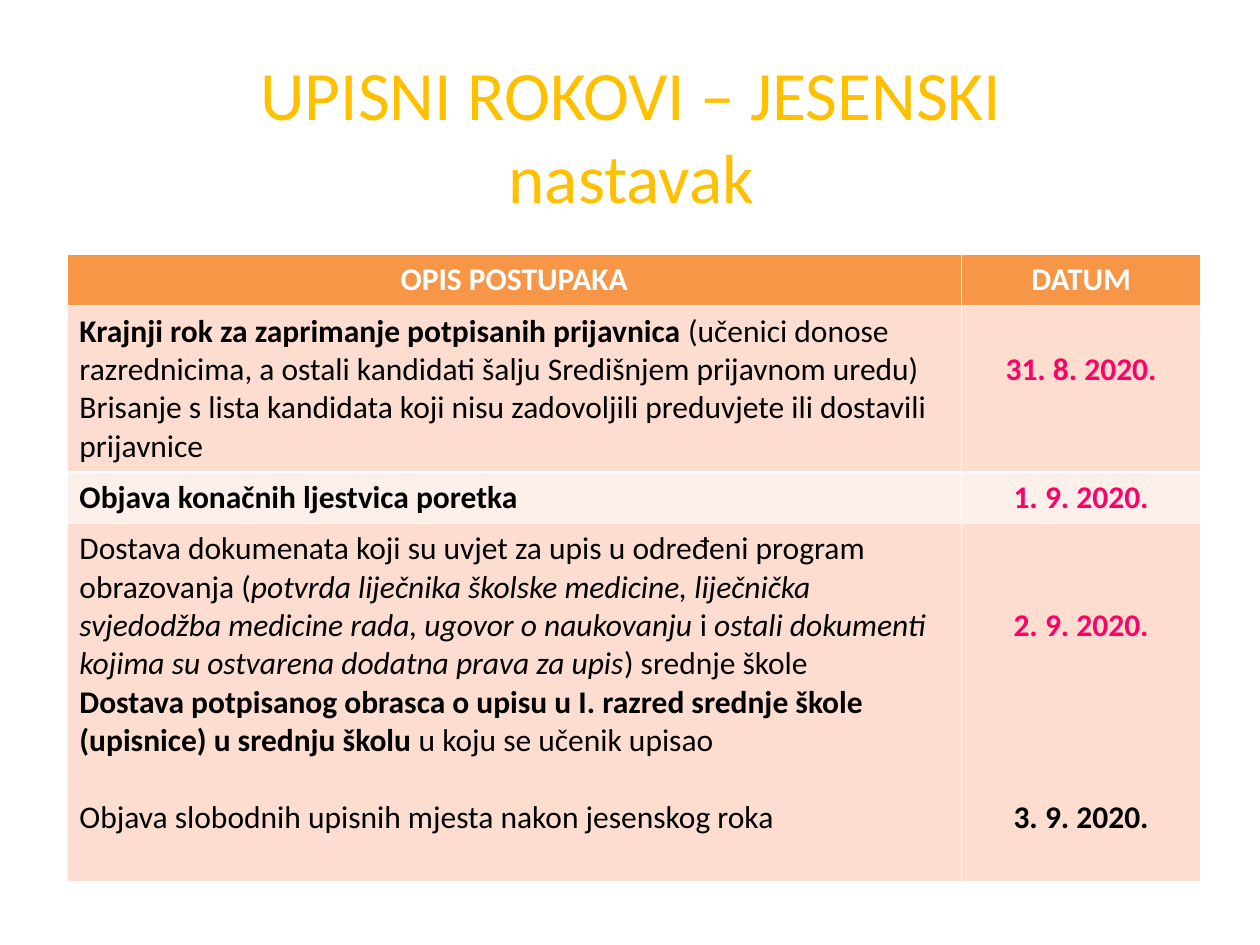
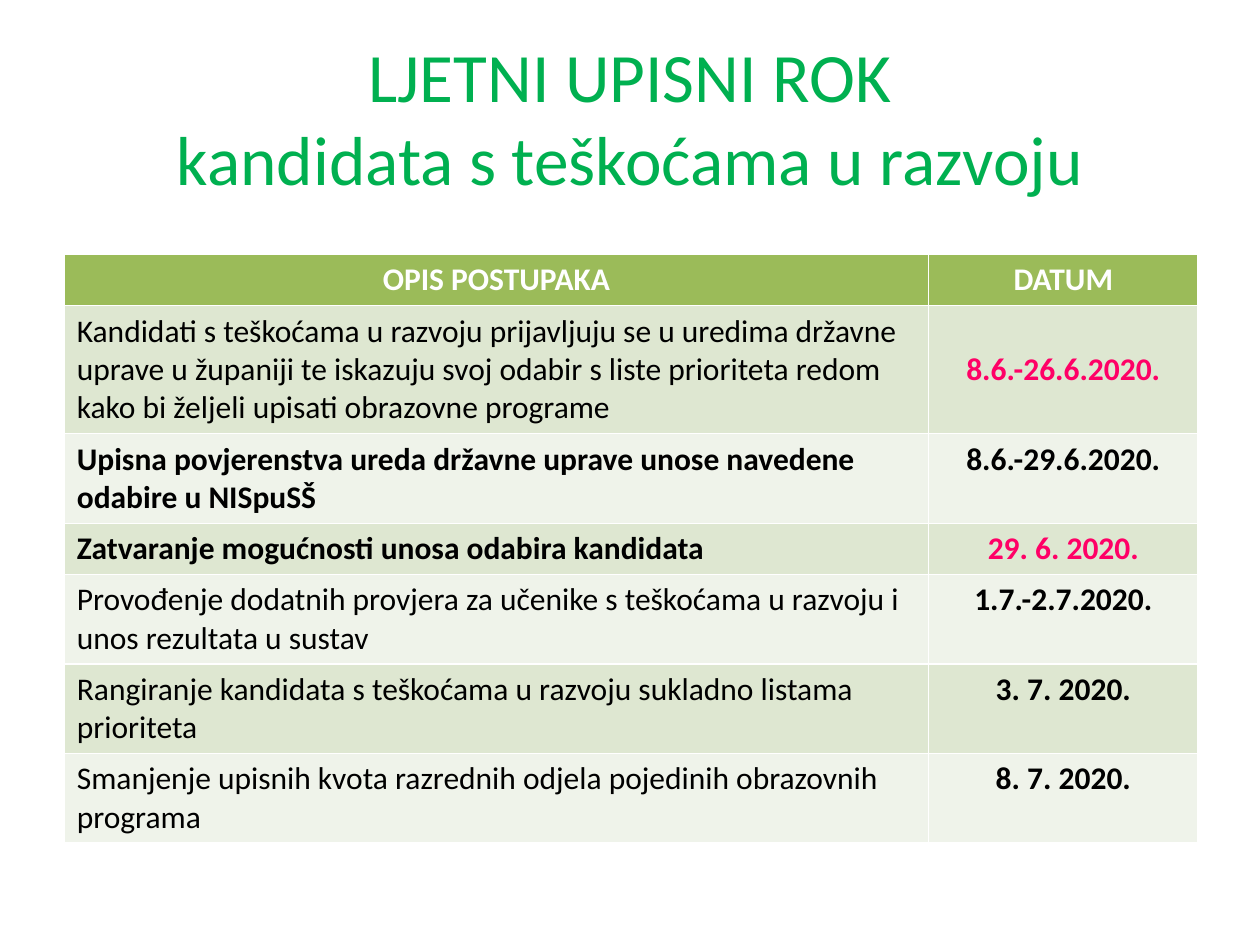
"""Build two slides of enrolment deadlines, each a title over a table of dates."""
from dataclasses import dataclass

from pptx import Presentation
from pptx.dml.color import RGBColor as Color
from pptx.enum.text import MSO_ANCHOR as Anchor, PP_ALIGN as Align
from pptx.util import Pt


@dataclass(frozen=True)
class Theme:
    font: str = "Calibri"
    title_size: float = 39.6
    body_size: float = 18
    line_height: float = 21.95
    cell_margin: float = 3.6
    text: str = "000000"
    header_text: str = "FFFFFF"
    deadline: str = "FF0066"


@dataclass(frozen=True)
class Palette:
    title: str
    header: str
    bands: tuple


@dataclass(frozen=True)
class Line:
    runs: tuple
    gap_lines: int = 0
    color: str = Theme.text


@dataclass(frozen=True)
class Row:
    lines: int
    description: tuple
    dates: tuple


THEME = Theme()
AUTUMN = Palette("FFC000", "F79646", ("FCDDCF", "FDEFE9"))
SUMMER = Palette("00B050", "9BBB59", ("DEE7D1", "EFF3EA"))
HEADINGS = ("OPIS POSTUPAKA", "DATUM")


def line(*runs, gap_lines=0):
    """Return a paragraph of (text, style) runs, where style is "", "b" or "i"."""
    return Line(runs, gap_lines)


def date(text, gap_lines=0, deadline=False):
    """Return a bold date, in the deadline colour if asked."""
    return Line(((text, "b"),), gap_lines, THEME.deadline if deadline else THEME.text)


AUTUMN_ROWS = (
    Row(4, (
        line(("Krajnji rok za zaprimanje potpisanih prijavnica ", "b"),
             ("(učenici donose razrednicima, a ostali kandidati šalju "
              "Središnjem prijavnom uredu)", "")),
        line(("Brisanje s lista kandidata koji nisu zadovoljili preduvjete "
              "ili dostavili prijavnice", "")),
    ), (date("31. 8. 2020.", 1, True),)),
    Row(1, (line(("Objava konačnih ljestvica poretka", "b")),),
        (date("1. 9. 2020.", deadline=True),)),
    Row(9, (
        line(("Dostava dokumenata koji su uvjet za upis u određeni program obrazovanja (", ""),
             ("potvrda liječnika školske medicine, liječnička svjedodžba medicine rada, "
              "ugovor o naukovanju ", "i"),
             ("i ", ""),
             ("ostali dokumenti kojima su ostvarena dodatna prava za upis", "i"),
             (") srednje škole", "")),
        line(("Dostava potpisanog obrasca o upisu u I. razred srednje škole "
              "(upisnice) u srednju školu ", "b"),
             ("u koju se učenik upisao", "")),
        line(("Objava slobodnih upisnih mjesta nakon jesenskog roka", ""), gap_lines=1),
    ), (date("2. 9. 2020.", 2, True), date("3. 9. 2020.", 4))),
)

SUMMER_ROWS = (
    Row(3, (line(("Kandidati s teškoćama u razvoju prijavljuju se u uredima državne uprave "
                  "u županiji te iskazuju svoj odabir s liste prioriteta redom kako bi "
                  "željeli upisati obrazovne programe", "")),),
        (date("8.6.-26.6.2020.", 1, True),)),
    Row(2, (line(("Upisna povjerenstva ureda državne uprave unose navedene "
                  "odabire u NISpuSŠ", "b")),),
        (date("8.6.-29.6.2020."),)),
    Row(1, (line(("Zatvaranje mogućnosti unosa odabira kandidata", "b")),),
        (date("29. 6. 2020.", deadline=True),)),
    Row(2, (line(("Provođenje dodatnih provjera za učenike s teškoćama u razvoju "
                  "i unos rezultata u sustav", "")),),
        (date("1.7.-2.7.2020."),)),
    Row(2, (line(("Rangiranje kandidata s teškoćama u razvoju sukladno "
                  "listama prioriteta", "")),),
        (date("3. 7. 2020."),)),
    Row(2, (line(("Smanjenje upisnih kvota razrednih odjela pojedinih "
                  "obrazovnih programa", "")),),
        (date("8. 7. 2020."),)),
)


def style_font(font, size, color):
    """Set the shared typeface with a size and a colour."""
    font.name = THEME.font
    font.size = Pt(size)
    font.color.rgb = Color.from_string(color)


def place_title(slide, box, text, color):
    """Move the title placeholder into the box and write its lines."""
    title = slide.shapes.title
    title.left, title.top, title.width, title.height = (Pt(length) for length in box)
    frame = title.text_frame
    frame.vertical_anchor = Anchor.MIDDLE
    frame.text = text
    paragraph = frame.paragraphs[0]
    paragraph.alignment = Align.CENTER
    style_font(paragraph.font, THEME.title_size, color)


def fill_cell(cell, lines, fill, alignment):
    """Fill a cell with paragraphs; gaps become a top margin or paragraph spacing."""
    cell.fill.solid()
    cell.fill.fore_color.rgb = Color.from_string(fill)
    cell.margin_top = Pt(THEME.cell_margin + lines[0].gap_lines * THEME.line_height)
    frame = cell.text_frame
    for index, content in enumerate(lines):
        paragraph = frame.add_paragraph() if index else frame.paragraphs[0]
        paragraph.alignment = alignment
        style_font(paragraph.font, THEME.body_size, content.color)
        if index and content.gap_lines:
            paragraph.space_before = Pt(content.gap_lines * THEME.line_height)
        for text, style in content.runs:
            run = paragraph.add_run()
            run.text = text
            run.font.bold = style == "b"
            run.font.italic = style == "i"


def row_height(lines):
    """Return the height of a row that holds this many lines of text."""
    return lines * THEME.line_height + 2 * THEME.cell_margin


def place_table(slide, left, top, column_widths, rows, palette):
    """Add the deadline table with its header row and alternating bands."""
    heights = [row_height(1)] + [row_height(row.lines) for row in rows]
    table = slide.shapes.add_table(
        len(heights), len(column_widths), Pt(left), Pt(top),
        Pt(sum(column_widths)), Pt(sum(heights))).table
    for column, width in zip(table.columns, column_widths):
        column.width = Pt(width)
    for table_row, height in zip(table.rows, heights):
        table_row.height = Pt(height)
    for column, heading in enumerate(HEADINGS):
        content = Line(((heading, "b"),), color=THEME.header_text)
        fill_cell(table.cell(0, column), (content,), palette.header, Align.CENTER)
    for index, row in enumerate(rows):
        band = palette.bands[index % 2]
        fill_cell(table.cell(index + 1, 0), row.description, band, Align.LEFT)
        fill_cell(table.cell(index + 1, 1), row.dates, band, Align.CENTER)


def add_deadline_slide(presentation, title, title_corner, table_left,
                       column_widths, rows, palette):
    """Add a title-only slide with a deadline table below the title."""
    slide = presentation.slides.add_slide(presentation.slide_layouts[5])
    place_title(slide, (*title_corner, 648, 90), title, palette.title)
    place_table(slide, table_left, 145.5, column_widths, rows, palette)


def main():
    """Build and save the presentation."""
    presentation = Presentation()
    presentation.slide_width, presentation.slide_height = Pt(720), Pt(540)
    add_deadline_slide(presentation, "UPISNI ROKOVI – JESENSKI\vnastavak",
                       (36.7, 31.7), 38.2, (511.2, 136.8), AUTUMN_ROWS, AUTUMN)
    add_deadline_slide(presentation, "LJETNI UPISNI ROK\vkandidata s teškoćama u razvoju",
                       (36, 21.6), 36.7, (493.9, 154.1), SUMMER_ROWS, SUMMER)
    presentation.save("out.pptx")


if __name__ == "__main__":
    main()
